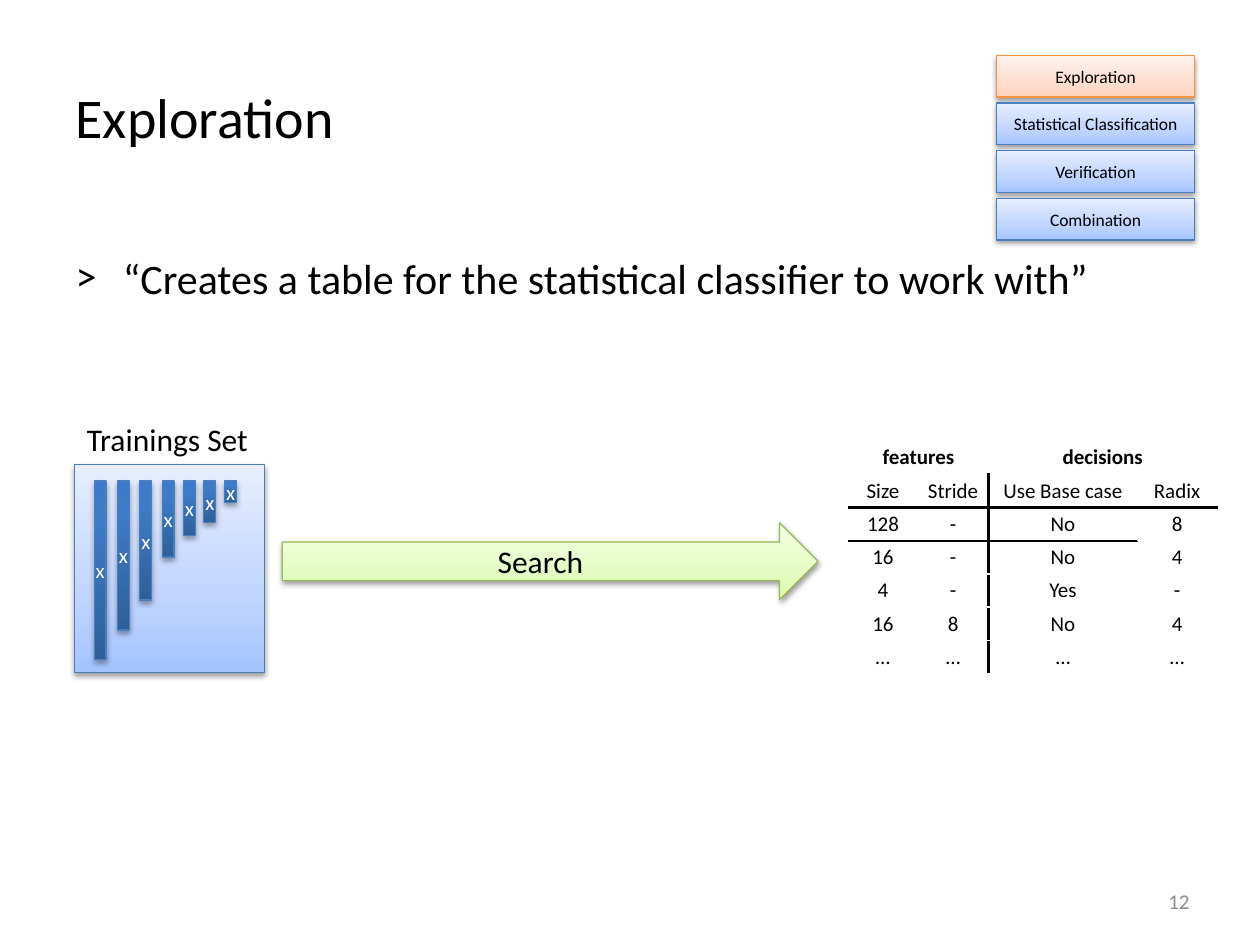
from pptx import Presentation
from pptx import util as u
from pptx.dml.color import RGBColor
from pptx.enum import shapes, text
from pptx.oxml import ns
from lxml import etree

BLUE = ([("A4C4FF", 0), ("BFD4FF", 35), ("E6EEFF", 100)], "4B7EBC", 38, 20000)
ORANGE = ([("FFD2BD", 0), ("FFDED0", 35), ("FFF2ED", 100)], "F69240", 38, 20000)
GREEN = ([("DAFDA7", 0), ("E4FCC2", 35), ("F5FFE7", 100)], "98B955", 38, 20000)
DARK = ([("2F5F99", 0), ("3D7CC7", 80), ("3A7CCB", 100)], "4B7EBC", 35, 23000)


def color(value):
    return RGBColor.from_string(value)


def add_node(parent, tag, **attributes):
    node = etree.SubElement(parent, ns.qn(tag))
    for name, value in attributes.items():
        node.set(name, str(value))
    return node


class PageBuilder:
    font = "Calibri"
    ink = "000000"

    def __init__(self, deck):
        self.page = deck.slides.add_slide(deck.slide_layouts[1])

    def add_words(self, frame, words, size, align=text.PP_ALIGN.LEFT, ink=None, bold=False):
        para = frame.paragraphs[0]
        para.alignment = align
        span = para.add_run()
        span.text = words
        span.font.name = self.font
        span.font.size = u.Pt(size)
        span.font.bold = bold
        span.font.color.rgb = color(ink or self.ink)
        return para

    def place(self, box, left, top, width, height):
        box.left, box.top = u.Cm(left), u.Cm(top)
        box.width, box.height = u.Cm(width), u.Cm(height)

    def title(self, words, *area):
        box = self.page.shapes.title
        self.place(box, *area)
        box.text_frame.vertical_anchor = text.MSO_ANCHOR.MIDDLE
        self.add_words(box.text_frame, words, 32)

    def bullet(self, words, *area):
        box = self.page.placeholders[1]
        self.place(box, *area)
        box.text_frame.auto_size = text.MSO_AUTO_SIZE.NONE
        para = self.add_words(box.text_frame, words, 24)
        para.line_spacing = 1.5
        properties = para._p.get_or_add_pPr()
        properties.set("marL", "342900")
        properties.set("indent", "-342900")
        add_node(properties, "a:buFont", typeface=self.font)
        add_node(properties, "a:buChar", char="˃")

    def label(self, words, size, *area, **style):
        box = self.page.shapes.add_textbox(*map(u.Cm, area))
        box.text_frame.word_wrap = True
        box.text_frame.vertical_anchor = text.MSO_ANCHOR.MIDDLE
        self.add_words(box.text_frame, words, size, **style)

    def block(self, kind, look, *area, words="", size=10, ink=None):
        stops, edge, opacity, distance = look
        box = self.page.shapes.add_shape(kind, *map(u.Cm, area))
        box.fill.gradient()
        box.fill.gradient_angle = 90
        stop_list = box._element.spPr.find(".//" + ns.qn("a:gsLst"))
        for old_stop in list(stop_list):
            stop_list.remove(old_stop)
        for value, position in stops:
            stop = add_node(stop_list, "a:gs", pos=position * 1000)
            add_node(stop, "a:srgbClr", val=value)
        box.line.color.rgb = color(edge)
        box.line.width = u.Pt(0.75)
        box.shadow.inherit = False
        effects = box._element.spPr.find(ns.qn("a:effectLst"))
        shadow = add_node(effects, "a:outerShdw", blurRad=40000, dist=distance,
                          dir=5400000, rotWithShape=0)
        shade = add_node(shadow, "a:srgbClr", val="000000")
        add_node(shade, "a:alpha", val=opacity * 1000)
        if words:
            frame = box.text_frame
            frame.margin_left = frame.margin_right = 0
            frame.margin_top = frame.margin_bottom = 0
            frame.word_wrap = False
            frame.vertical_anchor = text.MSO_ANCHOR.MIDDLE
            self.add_words(frame, words, size, text.PP_ALIGN.CENTER, ink)

    def border(self, cell, side, black):
        line = add_node(cell._tc.get_or_add_tcPr(), "a:ln" + side,
                        w=u.Pt(1.5 if black else 1))
        fill = add_node(line, "a:solidFill")
        add_node(fill, "a:srgbClr", val=self.ink if black else "FFFFFF")

    def table(self, rows, left, top, widths, row_height):
        grid = self.page.shapes.add_table(
            len(rows), len(widths), u.Cm(left), u.Cm(top),
            u.Cm(sum(widths)), u.Cm(row_height * len(rows))).table
        grid.first_row = grid.horz_banding = False
        for column, width in zip(grid.columns, widths):
            column.width = u.Cm(width)
        for i, row in enumerate(rows):
            grid.rows[i].height = u.Cm(row_height)
            for j, words in enumerate(row):
                cell = grid.cell(i, j)
                cell.margin_left = cell.margin_right = u.Cm(0.15)
                cell.margin_top = cell.margin_bottom = u.Cm(0.08)
                self.border(cell, "L", i > 0 and j == 2)
                self.border(cell, "R", i > 0 and j == 1)
                self.border(cell, "T", i == 2 or i == 3 and j < 3)
                self.border(cell, "B", i == 1 or i == 2 and j < 3)
                cell.fill.background()
                if words:
                    self.add_words(cell.text_frame, words, 12,
                                   text.PP_ALIGN.CENTER, bold=i == 0)
        for j in (0, 2):
            grid.cell(0, j).merge(grid.cell(0, j + 1))


def main():
    deck = Presentation()
    deck.slide_width, deck.slide_height = u.Cm(25.4), u.Cm(19.05)
    builder = PageBuilder(deck)
    rect = shapes.MSO_SHAPE.RECTANGLE

    builder.title("Exploration", 1.27, 0.76, 22.86, 3.18)
    builder.bullet("“Creates a table for the statistical classifier to work with”",
                   1.27, 4.45, 22.86, 12.57)
    builder.label("12", 12, 22.9, 17.65, 1.33, 1.02,
                  align=text.PP_ALIGN.RIGHT, ink="8C8C8C")

    steps = ["Exploration", "Statistical Classification", "Verification", "Combination"]
    for i, step in enumerate(steps):
        builder.block(rect, BLUE if i else ORANGE,
                      20.09, 1.12 + 0.96 * i, 3.99, 0.84, words=step)

    builder.block(shapes.MSO_SHAPE.RIGHT_ARROW, GREEN, 5.69, 10.54, 10.8, 1.55,
                  words="Search", size=18)
    builder.block(rect, BLUE, 1.5, 9.37, 3.84, 4.19)
    bars = [(1.9, 3.6), (2.37, 3), (2.82, 2.4), (3.27, 1.53),
            (3.7, 1.1), (4.11, 0.83), (4.53, 0.43)]
    for left, height in bars:
        builder.block(rect, DARK, left, 9.7, 0.24, height,
                      words="x", size=12, ink="FFFFFF")

    builder.table([
        ["features", "", "decisions", ""],
        ["Size", "Stride", "Use Base case", "Radix"],
        ["128", "-", "No", "8"],
        ["16", "-", "No", "4"],
        ["4", "-", "Yes", "-"],
        ["16", "8", "No", "4"],
        ["…", "…", "…", "…"],
    ], 17.1, 8.89, [1.4, 1.43, 3, 1.6], 0.67)
    builder.label("Trainings Set", 18, 1.5, 8.34, 3.84, 1.03)
    deck.save("out.pptx")


if __name__ == "__main__":
    main()
